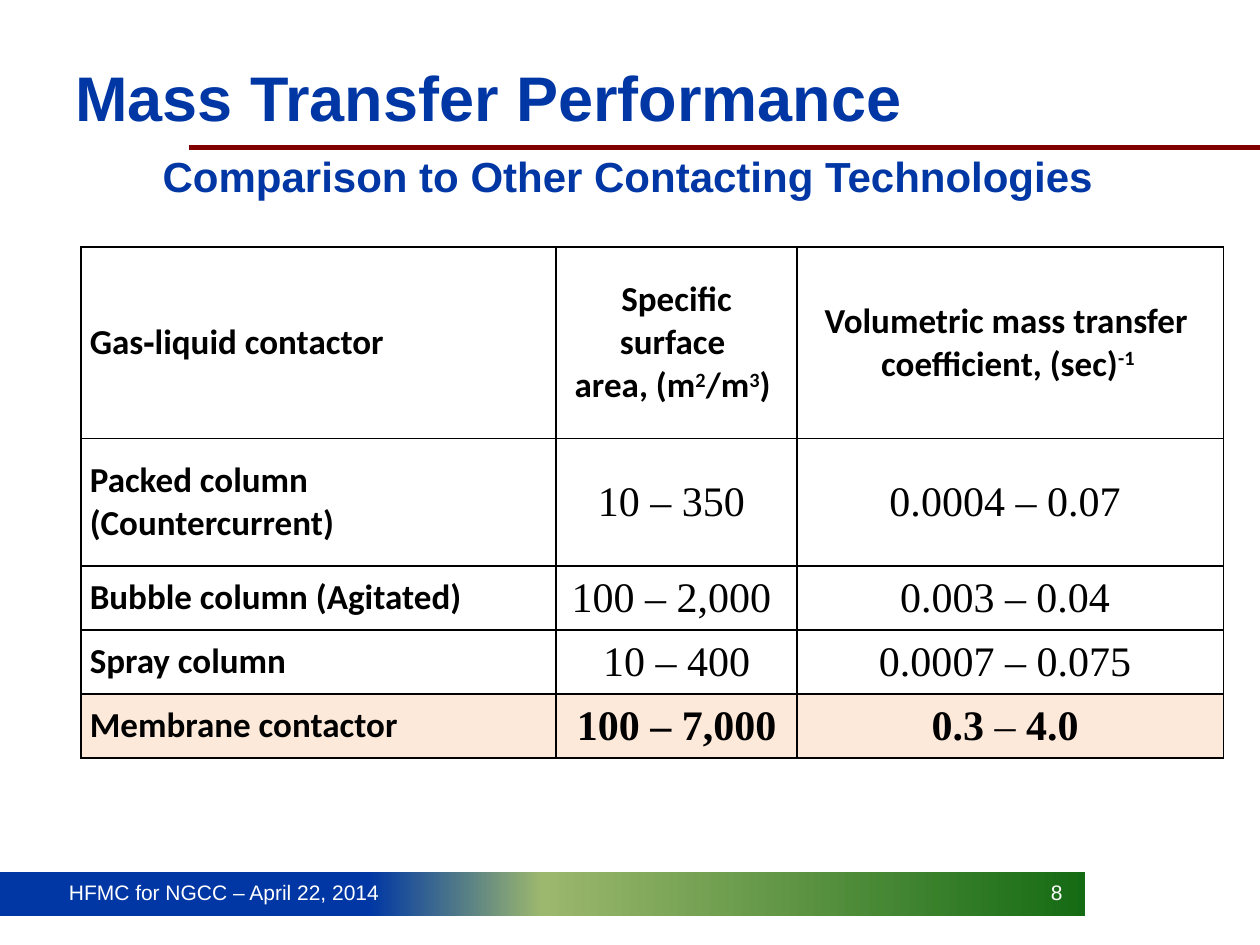
from collections import namedtuple
from copy import deepcopy

from lxml import etree
from pptx import Presentation
from pptx import util as u
from pptx.dml.color import RGBColor
from pptx.enum import shapes, text
from pptx.oxml import ns

NAVY = RGBColor(0x00, 0x37, 0xA4)
SAGE = RGBColor(0x9C, 0xB8, 0x6E)
FOREST = RGBColor(0x15, 0x6B, 0x13)
MAROON = RGBColor(0x80, 0x00, 0x00)
PEACH = RGBColor(0xFD, 0xE9, 0xD9)
WHITE = RGBColor(0xFF, 0xFF, 0xFF)
BLACK = RGBColor(0x00, 0x00, 0x00)

Box = namedtuple("Box", "left top width height")

COLUMN_WIDTHS = [9.58, 4.86, 8.59]
ROW_HEIGHTS = [3.86, 2.57, 1.29, 1.29, 1.29]
HEADINGS = [
    "Gas‐liquid contactor",
    "Specific surface \narea, (m|2|/m|3|) ",
    "Volumetric mass transfer \ncoefficient, (sec)|-1 ",
]
CONTACTORS = [
    ["Packed column (Countercurrent)", "10 – 350 ", "0.0004 – 0.07 "],
    ["Bubble column (Agitated)", "100 – 2,000 ", "0.003 – 0.04 "],
    ["Spray column", "10 – 400", "0.0007 – 0.075 "],
    ["Membrane contactor", "100 – 7,000", "0.3 |– |4.0 "],
]


def style(font, name, size, color, bold=False):
    """Set the face, size, colour and weight of a font."""
    font.name, font.size, font.bold = name, u.Pt(size), bold
    font.color.rgb = color


def add_text(page, box, lines):
    """Add a wrapping text box with one paragraph per line."""
    frame = page.shapes.add_textbox(*map(u.Cm, box)).text_frame
    frame.word_wrap = True
    frame.text = "\n".join(lines)
    return frame


def add_title(page, box):
    """Add the title, its indented subtitle and the rule between them."""
    rule_top = u.Cm(box.top + 1.85)
    rule = page.shapes.add_connector(
        shapes.MSO_CONNECTOR.STRAIGHT, u.Cm(box.left + 2.54), rule_top, u.Cm(25.4), rule_top
    )
    rule.line.color.rgb = MAROON
    rule.line.width = u.Pt(3)
    etree.SubElement(rule._element.spPr, ns.qn("a:effectLst"))

    frame = add_text(
        page, box, ["Mass Transfer Performance", "Comparison to Other Contacting Technologies"]
    )
    frame.vertical_anchor = text.MSO_ANCHOR.MIDDLE
    for para, size in zip(frame.paragraphs, (36, 24)):
        para.line_spacing = u.Pt(38)
        style(para.runs[0].font, "Arial", size, NAVY, True)
    frame.paragraphs[1]._p.get_or_add_pPr().set("marL", str(u.Cm(1.76)))


def set_borders(cell):
    """Draw a thin black line on all four sides of a cell."""
    properties = cell._tc.get_or_add_tcPr()
    for position, side in enumerate(("a:lnL", "a:lnR", "a:lnT", "a:lnB")):
        border = etree.Element(ns.qn(side), w=str(u.Pt(1)))
        fill = etree.SubElement(border, ns.qn("a:solidFill"))
        etree.SubElement(fill, ns.qn("a:srgbClr"), val=str(BLACK))
        properties.insert(position, border)


def fill_cell(cell, content, is_heading, is_label, is_best):
    """Write a cell, with every second part raised in headings or light in values."""
    cell.vertical_anchor = text.MSO_ANCHOR.MIDDLE
    cell.margin_left = cell.margin_right = u.Cm(0.18)
    cell.margin_top = cell.margin_bottom = 0
    cell.fill.solid()
    cell.fill.fore_color.rgb = PEACH if is_best else WHITE
    set_borders(cell)
    name, size = ("Calibri", 20) if is_heading or is_label else ("Times New Roman", 24)
    bold = is_heading or is_label or is_best
    cell.text_frame.text = content.replace("|", "")
    for para, line in zip(cell.text_frame.paragraphs, content.split("\n")):
        para.alignment = text.PP_ALIGN.LEFT if is_label else text.PP_ALIGN.CENTER
        para.clear()
        for index, part in enumerate(filter(None, line.split("|"))):
            span = para.add_run()
            span.text = part
            is_special = index % 2 == 1
            style(span.font, name, size, BLACK, bold and (is_heading or not is_special))
            if is_heading and is_special:
                span._r.get_or_add_rPr().set("baseline", "30000")


def add_contactor_table(page, box):
    """Add the table that compares the contactors."""
    rows = [HEADINGS] + CONTACTORS
    table = page.shapes.add_table(len(rows), len(HEADINGS), *map(u.Cm, box)).table
    for column, width in zip(table.columns, COLUMN_WIDTHS):
        column.width = u.Cm(width)
    for row, height in zip(table.rows, ROW_HEIGHTS):
        row.height = u.Cm(height)
    for r, contents in enumerate(rows):
        for c, content in enumerate(contents):
            fill_cell(table.cell(r, c), content, r == 0, c == 0, r == len(rows) - 1)


def add_footer(page, box):
    """Add the gradient band with the footer text and page number."""
    band = page.shapes.add_shape(shapes.MSO_SHAPE.RECTANGLE, *map(u.Cm, box))
    band.shadow.inherit = False
    band.line.fill.background()
    band.fill.gradient()
    band.fill.gradient_angle = 0
    stop_list = band._element.spPr.find(".//" + ns.qn("a:gsLst"))
    stop_list.append(deepcopy(stop_list[-1]))
    for stop, position, color in zip(
        band.fill.gradient_stops, (0.34, 0.5, 1), (NAVY, SAGE, FOREST)
    ):
        stop.position = position
        stop.color.rgb = color

    labels = [
        ("HFMC for NGCC – April 22, 2014", 1.14, 14, text.PP_ALIGN.LEFT),
        ("8", box.width - 6.12, 5.92, text.PP_ALIGN.RIGHT),
    ]
    for label, offset, width, alignment in labels:
        frame = add_text(page, Box(box.left + offset, box.top + 0.02, width, 1.02), [label])
        para = frame.paragraphs[0]
        para.alignment = alignment
        style(para.runs[0].font, "Arial", 12, WHITE)


def main():
    """Build the slide and save the deck."""
    deck = Presentation()
    deck.slide_width, deck.slide_height = u.Cm(25.4), u.Cm(19.05)
    page = deck.slides.add_slide(deck.slide_layouts[6])
    add_footer(page, Box(0, 17.58, 21.87, 0.88))
    add_title(page, Box(1.27, 1.12, 22.86, 3.18))
    add_contactor_table(page, Box(1.63, 4.98, sum(COLUMN_WIDTHS), sum(ROW_HEIGHTS)))
    deck.save("out.pptx")


if __name__ == "__main__":
    main()
